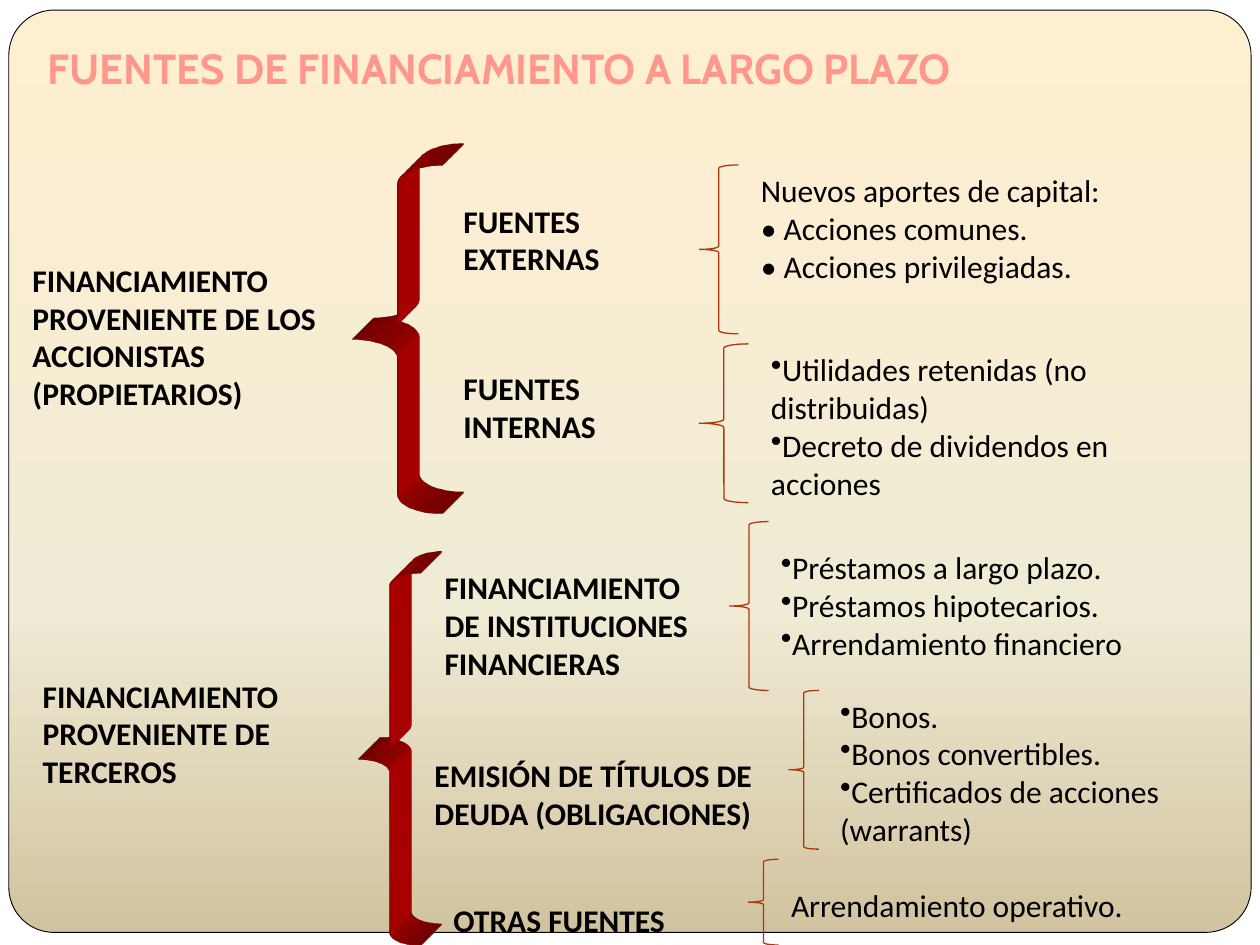
from lxml import etree
from pptx import Presentation
from pptx import oxml
from pptx.dml.color import RGBColor
from pptx.enum import shapes, text
from pptx.oxml import ns
from pptx.util import Inches, Pt

TITLE = "FUENTES DE FINANCIAMIENTO A LARGO PLAZO"
BACKDROP = [(0, "FFEFD1"), (65, "F0EBD5"), (100, "D1C39F")]
HEADINGS = [
    ((0.16, 2.02, 2.8, 1.31), ["FINANCIAMIENTO", "PROVENIENTE DE LOS ACCIONISTAS", "(PROPIETARIOS)"]),
    ((3.58, 1.55, 1.79, 0.71), ["FUENTES", "EXTERNAS"]),
    ((3.58, 2.88, 1.89, 0.71), ["FUENTES", "INTERNAS"]),
    ((0.24, 5.32, 2.32, 1.01), ["FINANCIAMIENTO", "PROVENIENTE DE", "TERCEROS"]),
    ((3.43, 4.46, 2.91, 1.01), ["FINANCIAMIENTO", "DE INSTITUCIONES", "FINANCIERAS"]),
    ((3.35, 5.95, 2.83, 0.71), ["EMISIÓN DE TÍTULOS DE DEUDA (OBLIGACIONES)"]),
    ((3.5, 7.1, 1.9, 0.4), ["OTRAS FUENTES"]),
]
PLAIN_DETAILS = [
    ((5.94, 1.31, 3.46, 1.01), ["Nuevos aportes de capital:", "• Acciones comunes.", "• Acciones privilegiadas."]),
    ((6.18, 6.98, 2.87, 0.4), ["Arrendamiento operativo."]),
]
BULLET_DETAILS = [
    ((6.02, 2.73, 3.62, 1.31), ["Utilidades retenidas (no distribuidas)", "Decreto de dividendos en acciones"]),
    ((6.1, 4.3, 3.44, 1.01), ["Préstamos a largo plazo.", "Préstamos hipotecarios.", "Arrendamiento financiero"]),
    ((6.57, 5.48, 3.03, 1.31), ["Bonos.", "Bonos convertibles.", "Certificados de acciones (warrants)"]),
]
MAIN_BRACES = [(2.8, 1.31, 0.71, 2.76), (2.85, 4.55, 0.49, 2.95)]
DETAIL_BRACES = [
    (5.55, 1.31, 0.31, 1.34), (5.94, 6.82, 0.24, 0.68), (5.55, 2.73, 0.39, 1.26),
    (5.79, 4.14, 0.31, 1.34), (6.26, 5.48, 0.24, 1.26),
]


def color(value):
    return RGBColor.from_string(value)


def place(frame):
    return [Inches(length) for length in frame]


def add_text(page, frame, lines, size=18, font="Calibri", bold=False, ink="000000",
             bullet=False, anchor=text.MSO_ANCHOR.TOP):
    box = page.shapes.add_textbox(*place(frame)).text_frame
    box.word_wrap = True
    box.vertical_anchor = anchor
    for index, line in enumerate(lines):
        para = box.paragraphs[0] if index == 0 else box.add_paragraph()
        span = para.add_run()
        span.text = line
        span.font.name, span.font.size, span.font.bold = font, Pt(size), bold
        span.font.color.rgb = color(ink)
        if bullet:
            properties = para._p.get_or_add_pPr()
            etree.SubElement(properties, ns.qn("a:buChar"), char="•")
    return box


def add_outline(page, kind, frame, ink, width):
    shape = page.shapes.add_shape(kind, *place(frame))
    shape.shadow.inherit = False
    shape.fill.background()
    shape.line.color.rgb = color(ink)
    shape.line.width = Pt(width)
    return shape


def add_backdrop(page):
    panel = add_outline(page, shapes.MSO_SHAPE.ROUNDED_RECTANGLE, (0.07, 0.08, 9.86, 7.32), "000000", 0.5)
    panel.adjustments[0] = 0.049
    stops = "".join(f'<a:gs pos="{pos * 1000}"><a:srgbClr val="{ink}"/></a:gs>' for pos, ink in BACKDROP)
    gradient = oxml.parse_xml(
        f'<a:gradFill {ns.nsdecls("a")} rotWithShape="1"><a:gsLst>{stops}</a:gsLst>'
        '<a:lin ang="5400000" scaled="0"/></a:gradFill>')
    properties = panel._element.spPr
    properties.replace(properties.find(ns.qn("a:noFill")), gradient)


def extrude(shape, ink):
    scene = (f'<a:scene3d {ns.nsdecls("a")}><a:camera prst="legacyObliqueTopRight"/>'
             '<a:lightRig rig="legacyFlat3" dir="b"/></a:scene3d>')
    solid = (f'<a:sp3d {ns.nsdecls("a")} extrusionH="430200" prstMaterial="legacyMatte">'
             f'<a:extrusionClr><a:srgbClr val="{ink}"/></a:extrusionClr></a:sp3d>')
    for part in (scene, solid):
        shape._element.spPr.append(oxml.parse_xml(part))


def main():
    """Build the slide on long-term sources of financing."""
    deck = Presentation()
    deck.slide_width, deck.slide_height = Inches(10), Inches(7.5)
    page = deck.slides.add_slide(deck.slide_layouts[6])
    add_backdrop(page)
    title = add_text(page, (0.28, 0, 9, 0.84), [TITLE], size=24, font="Cabin", bold=True,
                     ink="FF978C", anchor=text.MSO_ANCHOR.BOTTOM)
    title.margin_bottom = Inches(0.1)
    for frame, lines in HEADINGS:
        add_text(page, frame, lines, bold=True)
    for frame, lines in PLAIN_DETAILS:
        add_text(page, frame, lines)
    for frame, lines in BULLET_DETAILS:
        add_text(page, frame, lines, bullet=True)
    for frame in MAIN_BRACES:
        brace = add_outline(page, shapes.MSO_SHAPE.LEFT_BRACE, frame, "C00000", 0.75)
        brace.adjustments[0] = 0.212
        extrude(brace, "C00000")
    for frame in DETAIL_BRACES:
        add_outline(page, shapes.MSO_SHAPE.LEFT_BRACE, frame, "B1360B", 0.75)
    deck.save("out.pptx")


if __name__ == "__main__":
    main()
